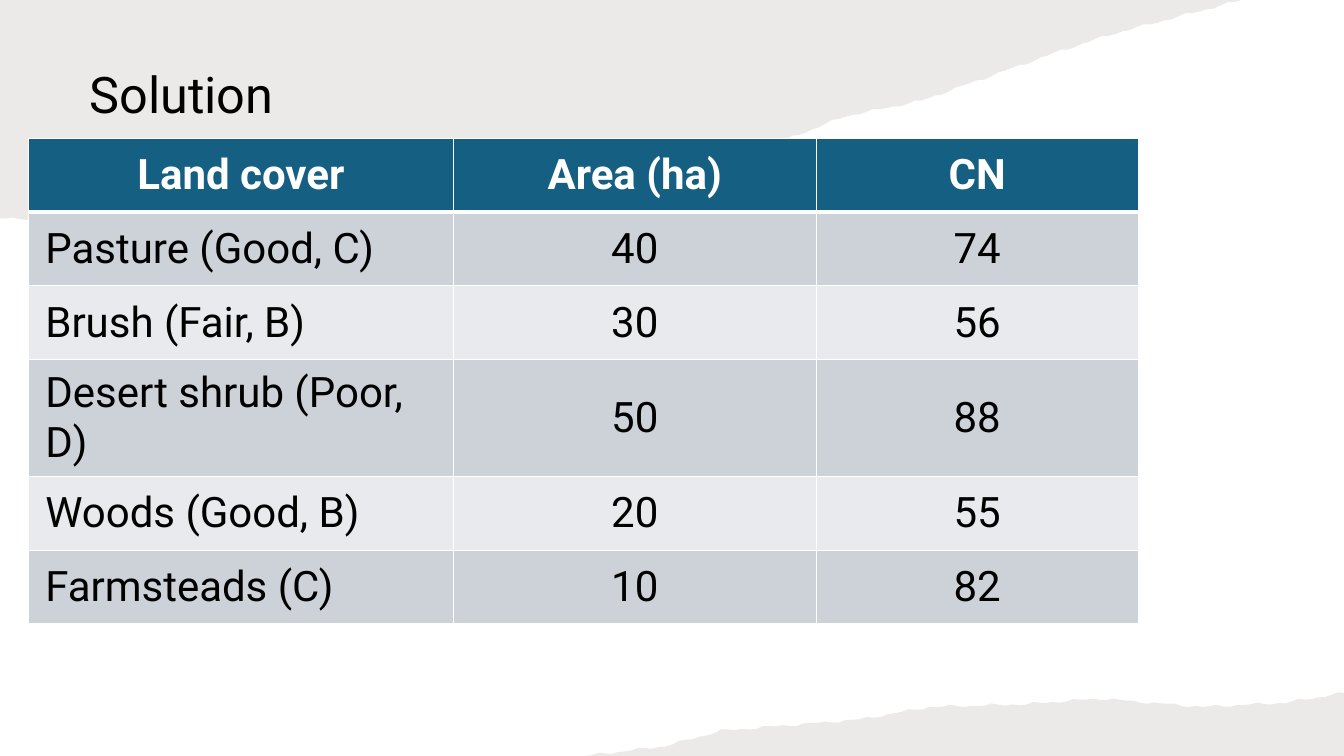
"""Build the Solution slide: a land cover table between two torn paper strips."""
from itertools import pairwise
from math import ceil, sin

from lxml.etree import SubElement
from pptx import Presentation
from pptx.dml.color import RGBColor
from pptx.enum.text import MSO_ANCHOR, PP_ALIGN
from pptx.oxml.ns import qn
from pptx.util import Pt

TITLE = "Solution"
ROWS = [
    ("Land cover", "Area (ha)", "CN"),
    ("Pasture (Good, C)", "40", "74"),
    ("Brush (Fair, B)", "30", "56"),
    ("Desert shrub (Poor, D)", "50", "88"),
    ("Woods (Good, B)", "20", "55"),
    ("Farmsteads (C)", "10", "82"),
]

SLIDE_WIDTH, SLIDE_HEIGHT = 960, 540
TITLE_BOX = (56.9, 40.3, 602.6, 58.3)
TABLE_LEFT, TABLE_TOP = 20.4, 98.8
COLUMN_WIDTHS = (303.4, 259.3, 229.9)
ROW_HEIGHT = 52.7
MARGIN_X, MARGIN_Y = 12, 5.7

TOP_EDGE = [
    (887, 0), (792, 25), (753, 38), (658, 72), (604, 83), (566, 98),
    (494, 127), (429, 136), (342, 150), (273, 144), (198, 138), (154, 146),
    (62, 156), (0, 156),
]
BOTTOM_EDGE = [
    (418, 540), (475, 533), (515, 522), (614, 514), (664, 505), (733, 503),
    (785, 499), (859, 505), (918, 502), (960, 495),
]
TOP_CORNERS = [(0, 0)]
BOTTOM_CORNERS = [(SLIDE_WIDTH, SLIDE_HEIGHT)]
TEAR_STEP, TEAR_DEPTH = 5, 0.6

FONT = "Roboto"
TITLE_SIZE, TABLE_SIZE = 36, 30
THIN, THICK = 1, 3
BLACK = RGBColor(0x00, 0x00, 0x00)
WHITE = RGBColor(0xFF, 0xFF, 0xFF)
PAPER = RGBColor(0x82, 0x76, 0x6A)
HEADER = RGBColor(0x15, 0x60, 0x82)
BANDS = (RGBColor(0xE8, 0xEA, 0xED), RGBColor(0xCC, 0xD2, 0xD8))


def torn_edge(anchors):
    """Join the anchors with short steps that waver up and down."""
    points = []
    for (x0, y0), (x1, y1) in pairwise(anchors):
        steps = ceil(abs(x1 - x0) / TEAR_STEP)
        for step in range(steps):
            t, k = step / steps, len(points)
            y = y0 + t * (y1 - y0) + TEAR_DEPTH * (sin(2.1 * k) + sin(5.3 * k))
            points.append((x0 + t * (x1 - x0), min(max(y, 0), SLIDE_HEIGHT)))
    return points + [anchors[-1]]


def add_strip(s, anchors, corners):
    """Draw a torn paper strip at 15 % opacity."""
    outline = [(Pt(x), Pt(y)) for x, y in torn_edge(anchors) + corners]
    builder = s.shapes.build_freeform(*outline[0])
    builder.add_line_segments(outline[1:], close=True)
    sp = builder.convert_to_shape()
    sp.shadow.inherit = False
    sp.fill.solid()
    sp.fill.fore_color.rgb = PAPER
    sp.line.fill.background()
    color = sp.fill._xPr.find(qn("a:solidFill"))[0]
    SubElement(color, qn("a:alpha"), val="15000")


def add_run(p, text, size, color, bold=False):
    """Add one formatted run to a paragraph."""
    r = p.add_run()
    r.text = text
    r.font.name = FONT
    r.font.size = Pt(size)
    r.font.bold = bold
    r.font.color.rgb = color


def add_title(s):
    """Add the slide title."""
    tf = s.shapes.add_textbox(*map(Pt, TITLE_BOX)).text_frame
    tf.word_wrap = True
    tf.vertical_anchor = MSO_ANCHOR.MIDDLE
    p = tf.paragraphs[0]
    p.line_spacing = 0.9
    add_run(p, TITLE, TITLE_SIZE, BLACK)


def set_borders(cell, row):
    """Give a cell white borders, thick below the header."""
    tc_pr = cell._tc.get_or_add_tcPr()
    for side in "LRTB":
        width = THICK if (row, side) in ((0, "B"), (1, "T")) else THIN
        ln = SubElement(tc_pr, qn(f"a:ln{side}"), w=str(Pt(width)))
        fill = SubElement(ln, qn("a:solidFill"))
        SubElement(fill, qn("a:srgbClr"), val=str(WHITE))


def fill_cell(cell, text, row, column):
    """Format one cell by its row and column and write its text."""
    is_header = row == 0
    is_label = column == 0 and not is_header
    set_borders(cell, row)
    cell.fill.solid()
    cell.fill.fore_color.rgb = HEADER if is_header else BANDS[row % 2]
    cell.vertical_anchor = MSO_ANCHOR.MIDDLE
    cell.margin_left = cell.margin_right = Pt(MARGIN_X)
    cell.margin_top = cell.margin_bottom = Pt(MARGIN_Y)
    p = cell.text_frame.paragraphs[0]
    p.alignment = PP_ALIGN.LEFT if is_label else PP_ALIGN.CENTER
    add_run(p, text, TABLE_SIZE, WHITE if is_header else BLACK, is_header)


def add_land_cover_table(s):
    """Add the table of land covers, areas and curve numbers."""
    table = s.shapes.add_table(
        len(ROWS), len(COLUMN_WIDTHS), Pt(TABLE_LEFT), Pt(TABLE_TOP),
        Pt(sum(COLUMN_WIDTHS)), Pt(ROW_HEIGHT * len(ROWS))).table
    for column, width in zip(table.columns, COLUMN_WIDTHS):
        column.width = Pt(width)
    for i, texts in enumerate(ROWS):
        table.rows[i].height = Pt(ROW_HEIGHT)
        for j, text in enumerate(texts):
            fill_cell(table.cell(i, j), text, i, j)


def main():
    """Build and save the slide."""
    prs = Presentation()
    prs.slide_width, prs.slide_height = Pt(SLIDE_WIDTH), Pt(SLIDE_HEIGHT)
    s = prs.slides.add_slide(prs.slide_layouts[6])
    add_strip(s, TOP_EDGE, TOP_CORNERS)
    add_title(s)
    add_strip(s, BOTTOM_EDGE, BOTTOM_CORNERS)
    add_land_cover_table(s)
    prs.save("out.pptx")


if __name__ == "__main__":
    main()
